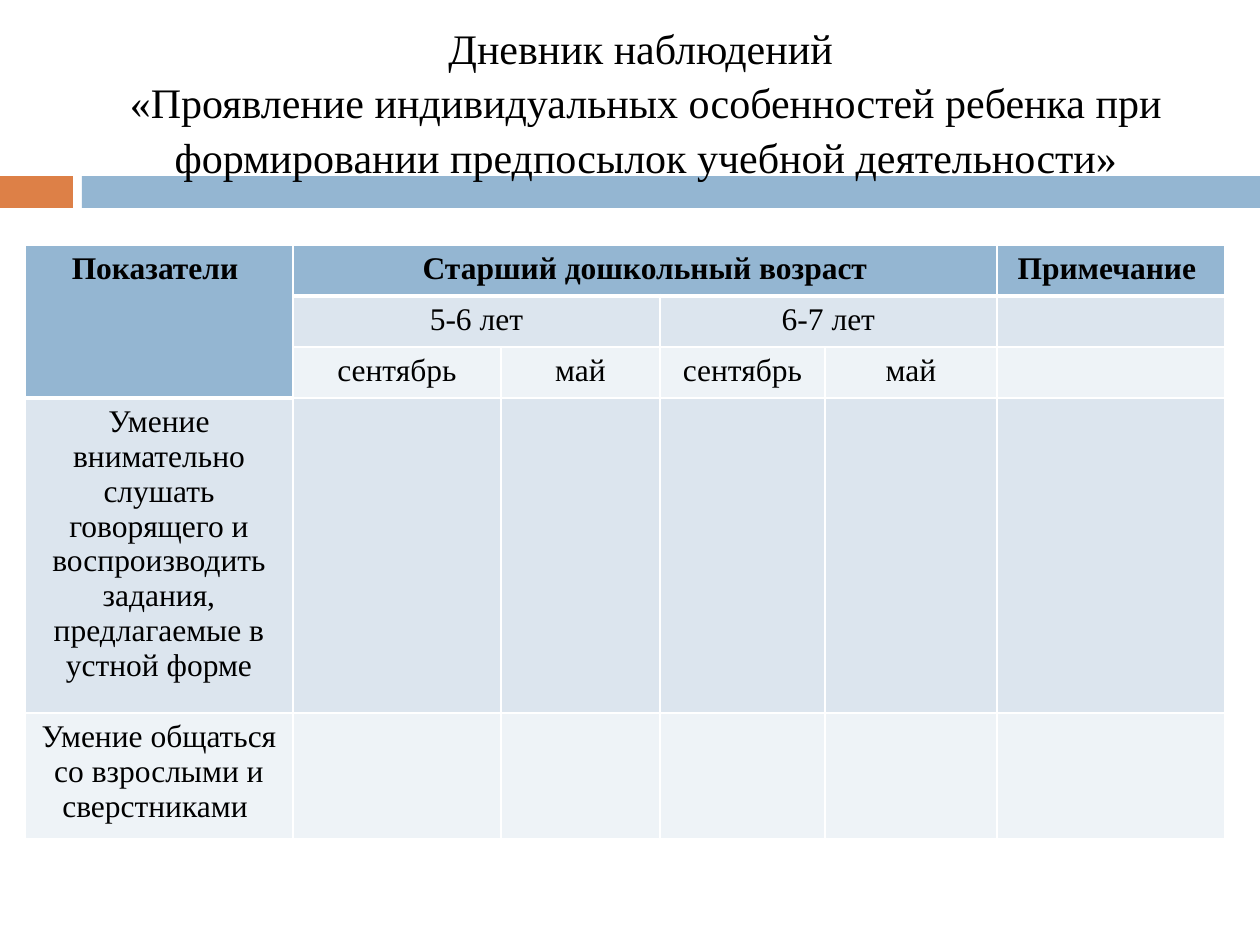
import dataclasses

import pptx
import pptx.dml.color
import pptx.enum.shapes
import pptx.enum.text
import pptx.util
from lxml import etree

PX = 914400 // 126
DRAWING = "http://schemas.openxmlformats.org/drawingml/2006/main"


@dataclasses.dataclass(frozen=True)
class Theme:
    font: str = "Times New Roman"
    text: str = "000000"
    accent: str = "DD8047"
    header: str = "94B6D2"
    bands: tuple = ("DCE5EE", "EEF3F7")
    border: str = "FFFFFF"
    title_size: int = 24
    table_size: int = 18
    thin: int = 1
    thick: int = 3


class Builder:
    def __init__(self, theme, page):
        self.theme = theme
        self.page = page

    def paint(self, fill, color):
        fill.solid()
        fill.fore_color.rgb = pptx.dml.color.RGBColor.from_string(color)

    def set_text(self, frame, text, size, bold=False):
        para = frame.paragraphs[0]
        para.alignment = pptx.enum.text.PP_ALIGN.CENTER
        para.font.name = self.theme.font
        para.font.size = pptx.util.Pt(size)
        para.font.bold = bold
        self.paint(para.font.fill, self.theme.text)
        # A vertical tab in the text becomes a line break
        para.text = text
        return para

    def bar(self, left, top, width, height, color):
        shape = self.page.shapes.add_shape(
            pptx.enum.shapes.MSO_SHAPE.RECTANGLE,
            left * PX, top * PX, width * PX, height * PX)
        shape.shadow.inherit = False
        self.paint(shape.fill, color)
        shape.line.fill.background()

    def title(self, left, top, width, height, text):
        box = self.page.shapes.add_textbox(
            left * PX, top * PX, width * PX, height * PX)
        frame = box.text_frame
        frame.word_wrap = True
        frame.vertical_anchor = pptx.enum.text.MSO_ANCHOR.MIDDLE
        para = self.set_text(frame, text, self.theme.title_size)
        para.line_spacing = 1.08

    def border(self, cell, top, bottom):
        properties = cell._tc.get_or_add_tcPr()
        thin = self.theme.thin
        for side, width in (("L", thin), ("R", thin), ("T", top), ("B", bottom)):
            line = etree.SubElement(properties, f"{{{DRAWING}}}ln{side}",
                                    w=str(pptx.util.Pt(width)))
            fill = etree.SubElement(line, f"{{{DRAWING}}}solidFill")
            etree.SubElement(fill, f"{{{DRAWING}}}srgbClr", val=self.theme.border)

    def table(self, left, top, widths, heights, texts, merges, is_header):
        theme = self.theme
        table = self.page.shapes.add_table(
            len(heights), len(widths), left * PX, top * PX,
            sum(widths) * PX, sum(heights) * PX).table
        for column, width in zip(table.columns, widths):
            column.width = width * PX
        for row, height in zip(table.rows, heights):
            row.height = height * PX

        for r in range(len(heights)):
            for c in range(len(widths)):
                cell = table.cell(r, c)
                header = is_header(r, c)
                below_header = r > 0 and not header and is_header(r - 1, c)
                self.border(cell,
                            theme.thick if below_header else theme.thin,
                            theme.thick if header else theme.thin)
                self.paint(cell.fill,
                           theme.header if header else theme.bands[(r - 1) % 2])
                self.set_text(cell.text_frame, texts.get((r, c), ""),
                              theme.table_size, bold=header)

        for first, last in merges:
            table.cell(*first).merge(table.cell(*last))


def main():
    deck = pptx.Presentation()
    deck.slide_width = 1260 * PX
    deck.slide_height = 945 * PX
    theme = Theme()
    builder = Builder(theme, deck.slides.add_slide(deck.slide_layouts[6]))

    # Divider bars
    builder.bar(0, 176, 73, 32, theme.accent)
    builder.bar(82, 176, 1178, 32, theme.header)

    # Title
    builder.title(84, 32, 1124, 136,
                  "Дневник наблюдений \v«Проявление индивидуальных особенностей "
                  "ребенка при формировании предпосылок учебной деятельности»")

    # Observation table: texts are keyed by row and column
    texts = {
        (0, 0): "Показатели ",
        (0, 1): "Старший дошкольный возраст",
        (0, 5): "Примечание ",
        (1, 1): "5-6 лет",
        (1, 3): "6-7 лет",
        (3, 0): "Умение внимательно слушать говорящего и воспроизводить "
                "задания, предлагаемые в устной форме",
        (4, 0): "Умение общаться со взрослыми и сверстниками ",
    }
    for column in (1, 3):
        texts[2, column] = "сентябрь"
        texts[2, column + 1] = "май"

    builder.table(
        25, 245,
        widths=(268, 208, 159, 165, 172, 228),
        heights=(51, 51, 51, 291, 117),
        texts=texts,
        merges=(((0, 0), (2, 0)), ((0, 1), (0, 4)),
                ((1, 1), (1, 2)), ((1, 3), (1, 4))),
        is_header=lambda row, column: row == 0 or (column == 0 and row < 3))

    deck.save("out.pptx")


if __name__ == "__main__":
    main()
